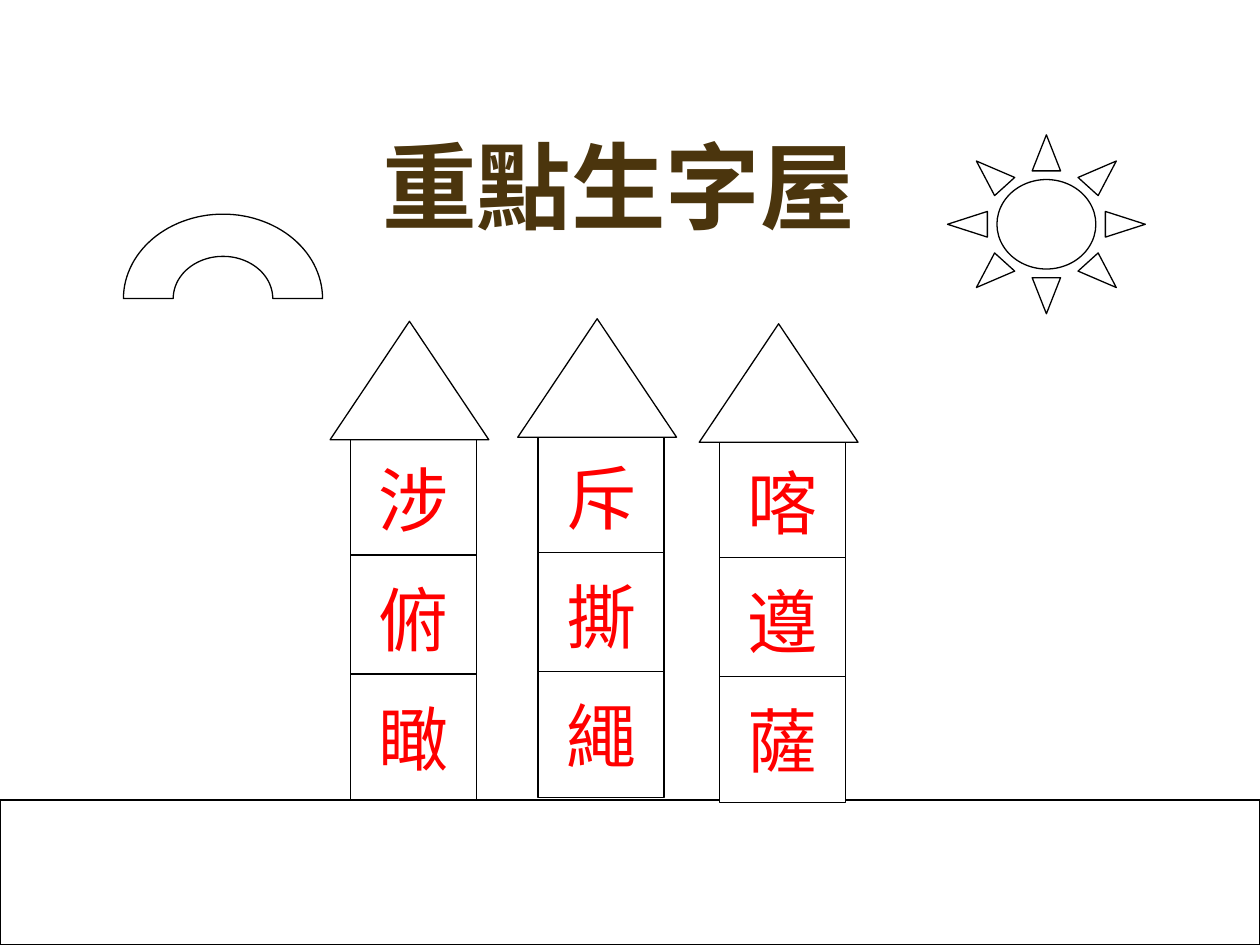
import math
from dataclasses import dataclass

import pptx
import pptx.dml.color
import pptx.enum.shapes
import pptx.enum.text
import pptx.util

COLUMNS, ROWS = 10, 7.5
UNIT = pptx.util.Inches(1)  # one grid square
SHAPES = pptx.enum.shapes.MSO_SHAPE
INK, PAPER, RED, BROWN = "000000", "FFFFFF", "FF0000", "4B350D"
FLOOR_STEP = 0.945
ROOF_WIDTH, ROOF_HEIGHT = 1.26, 0.94


@dataclass
class Area:
    column: float
    row: float
    columns: float
    rows: float

    def emu(self) -> list[int]:
        return [round(n * UNIT) for n in (self.column, self.row, self.columns, self.rows)]


@dataclass
class House:
    column: float
    roof_row: float
    characters: str


def rgb(colour: str) -> pptx.dml.color.RGBColor:
    return pptx.dml.color.RGBColor.from_string(colour)


def outline(shape, fill: str | None) -> None:
    shape.shadow.inherit = False
    if fill:
        shape.fill.solid()
        shape.fill.fore_color.rgb = rgb(fill)
    else:
        shape.fill.background()
    shape.line.color.rgb = rgb(INK)
    shape.line.width = pptx.util.Pt(0.75)


def draw(slide, kind, area: Area, fill: str | None = PAPER):
    shape = slide.shapes.add_shape(kind, *area.emu())
    outline(shape, fill)
    return shape


def write(shape, text: str, wrap: bool, colour: str, formats: dict) -> None:
    frame = shape.text_frame
    frame.word_wrap = wrap
    frame.vertical_anchor = pptx.enum.text.MSO_ANCHOR.MIDDLE
    frame.text = text
    paragraph = frame.paragraphs[0]
    paragraph.alignment = pptx.enum.text.PP_ALIGN.CENTER
    font = paragraph.runs[0].font
    for attribute, value in formats.items():
        setattr(font, attribute, value)
    font.color.rgb = rgb(colour)


def draw_house(slide, house: House) -> None:
    character_format = {"size": pptx.util.Pt(40), "name": "Arial"}
    for floor, character in enumerate(house.characters):
        row = house.roof_row + 0.91 + floor * FLOOR_STEP
        room = draw(slide, SHAPES.RECTANGLE, Area(house.column, row, 1, 1))
        write(room, character, False, RED, character_format)
    draw(slide, SHAPES.ISOSCELES_TRIANGLE,
         Area(house.column - 0.16, house.roof_row, ROOF_WIDTH, ROOF_HEIGHT))


def arc(centre: tuple[float, float], radii: tuple[float, float]) -> list[tuple[float, float]]:
    """Points of a half ellipse, from left to right."""
    angles = [math.pi * (1 - step / 60) for step in range(61)]
    return [((centre[0] + radii[0] * math.cos(a)) * UNIT,
             (centre[1] - radii[1] * math.sin(a)) * UNIT) for a in angles]


def draw_rainbow(slide) -> None:
    centre, radii = (1.77, 2.37), (0.79, 0.67)
    inner = arc(centre, (radii[0] / 2, radii[1] / 2))
    outer = arc(centre, radii)
    points = inner + outer[::-1]
    builder = slide.shapes.build_freeform(*points[0])
    builder.add_line_segments(points[1:], close=True)
    outline(builder.convert_to_shape(), None)


def main() -> None:
    deck = pptx.Presentation()
    deck.slide_width, deck.slide_height = round(COLUMNS * UNIT), round(ROWS * UNIT)
    slide = deck.slides.add_slide(deck.slide_layouts[5])

    # Title
    title = slide.shapes.title
    title.left, title.top, title.width, title.height = Area(2.16, 0.76, 5.5, 1.42).emu()
    write(title, "重點生字屋", True, BROWN,
          {"size": pptx.util.Pt(54), "name": "Times New Roman", "bold": True})

    # Houses behind the ground line
    for house in (House(2.78, 2.55, "涉俯瞰"), House(4.27, 2.53, "斥撕繩")):
        draw_house(slide, house)

    # Ground and sky
    draw(slide, SHAPES.RECTANGLE, Area(0, 6.35, COLUMNS, ROWS - 6.35), None)
    draw(slide, SHAPES.SUN, Area(7.52, 1.07, 1.57, 1.42))
    draw_rainbow(slide)

    # House in front of the ground line
    draw_house(slide, House(5.71, 2.57, "喀遵薩"))

    deck.save("out.pptx")


if __name__ == "__main__":
    main()
